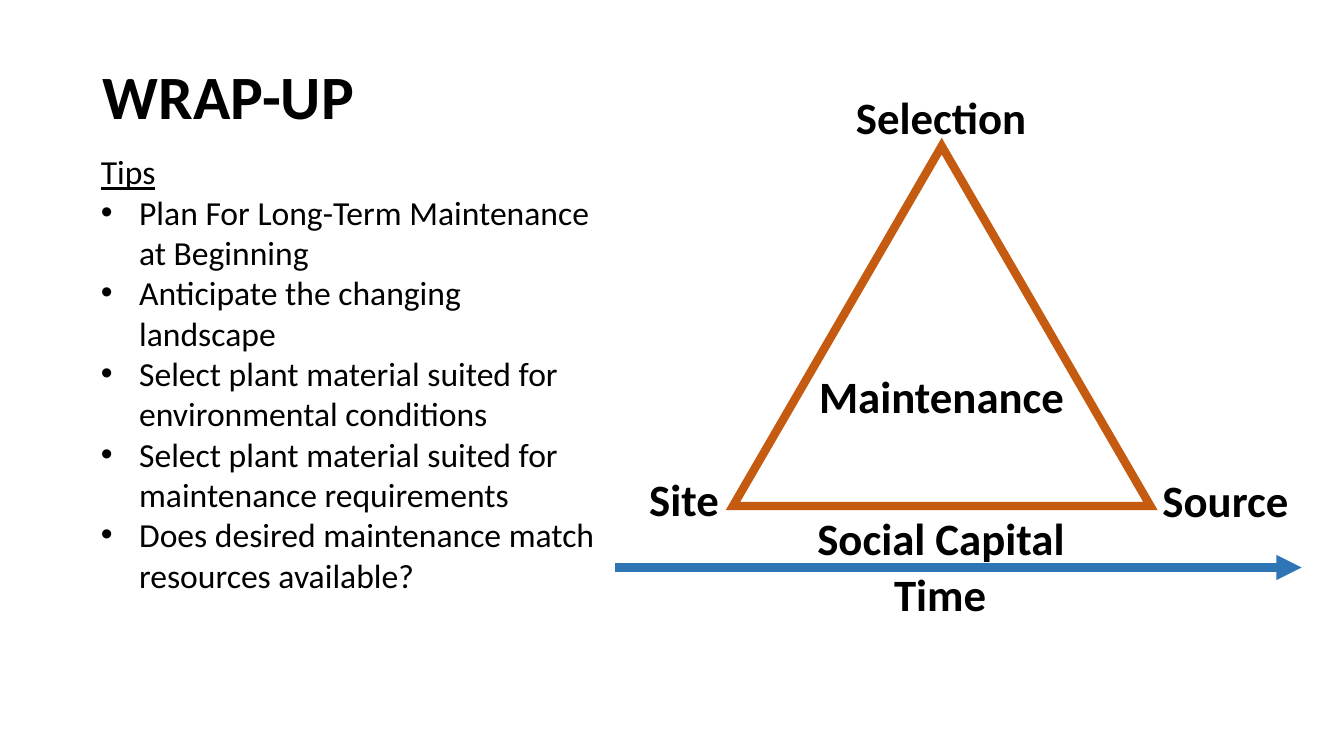
import dataclasses
import typing

import lxml.etree
import pptx
import pptx.dml.color
import pptx.enum.shapes
import pptx.enum.text
import pptx.oxml.ns
import pptx.util

SCALE = 9144
FONT = "Calibri"
BLACK = "000000"
RUST = "C55A11"
BLUE = "2E75B6"
ALIGN = pptx.enum.text.PP_ALIGN
ANCHOR = pptx.enum.text.MSO_ANCHOR


@dataclasses.dataclass
class Label:
    text: str
    left: int
    top: int
    width: int
    height: int = 64


LABELS = [
    Label("Site", 555, 463, 247),
    Label("Selection", 745, 84, 377),
    Label("Source", 1107, 464, 217),
    Label("Maintenance", 799, 360, 270),
    Label("Time", 832, 562, 201, 53),
    Label("Social Capital", 787, 501, 293),
]
TIPS = [
    "Plan For Long-Term Maintenance at Beginning",
    "Anticipate the changing landscape",
    "Select plant material suited for environmental conditions",
    "Select plant material suited for maintenance requirements",
    "Does desired maintenance match resources available?",
]


def px(size: int) -> int:
    return pptx.util.Emu(size * SCALE)


def paint(code: str) -> pptx.dml.color.RGBColor:
    return pptx.dml.color.RGBColor.from_string(code)


def add(node: typing.Any, tag: str, **attrs: str) -> None:
    item = lxml.etree.SubElement(node, pptx.oxml.ns.qn(tag))
    for key, value in attrs.items():
        item.set(key, value)


def place(shape: typing.Any, left: int, top: int, width: int, height: int) -> None:
    shape.left, shape.top = px(left), px(top)
    shape.width, shape.height = px(width), px(height)


def setup(shape: typing.Any, anchor: typing.Any) -> typing.Any:
    frame = shape.text_frame
    frame.word_wrap = True
    frame.auto_size = pptx.enum.text.MSO_AUTO_SIZE.NONE
    frame.vertical_anchor = anchor
    return frame


def write(para: typing.Any, text: str, size: int = 32, bold: bool = True,
          line: bool = False, align: typing.Any = ALIGN.CENTER,
          space: float = 1.0) -> None:
    para.alignment = align
    para.line_spacing = space
    para.space_before = pptx.util.Pt(0)
    run = para.add_run()
    run.text = text
    font = run.font
    font.name, font.size = FONT, pptx.util.Pt(size)
    font.bold, font.underline = bold, line
    font.color.rgb = paint(BLACK)


def mark(para: typing.Any, bullet: bool) -> None:
    props = para._p.get_or_add_pPr()
    props.set("marL", str(px(38 if bullet else 0)))
    props.set("indent", str(px(-38 if bullet else 0)))
    if bullet:
        add(props, "a:buFont", typeface="Arial")
        add(props, "a:buChar", char="•")
    else:
        add(props, "a:buNone")


def stroke(shape: typing.Any, code: str) -> typing.Any:
    shape.line.color.rgb = paint(code)
    shape.line.width = pptx.util.Pt(6)
    node = shape.line._get_or_add_ln()
    add(node, "a:miter", lim="800000")
    return node


def draw_text(slide: typing.Any) -> None:
    title = slide.shapes.title
    place(title, 92, 61, 1150, 124)
    frame = setup(title, ANCHOR.TOP)
    write(frame.paragraphs[0], "WRAP-UP", size=44, align=ALIGN.LEFT, space=0.9)

    body = slide.placeholders[1]
    place(body, 90, 145, 518, 629)
    frame = setup(body, ANCHOR.TOP)
    for rank, tip in enumerate(["Tips"] + TIPS):
        para = frame.add_paragraph() if rank else frame.paragraphs[0]
        write(para, tip, size=24, bold=False, line=rank == 0, align=ALIGN.LEFT)
        mark(para, rank > 0)


def draw_chart(slide: typing.Any) -> None:
    kind = pptx.enum.shapes.MSO_SHAPE.ISOSCELES_TRIANGLE
    peak = slide.shapes.add_shape(kind, px(727), px(145), px(414), px(357))
    peak.shadow.inherit = False
    peak.fill.background()
    stroke(peak, RUST)

    kind = pptx.enum.shapes.MSO_CONNECTOR.STRAIGHT
    time = slide.shapes.add_connector(kind, px(610), px(563), px(1291), px(563))
    add(stroke(time, BLUE), "a:tailEnd", type="triangle")
    add(time._element.spPr, "a:effectLst")

    for label in LABELS:
        box = slide.shapes.add_textbox(0, 0, 0, 0)
        place(box, label.left, label.top, label.width, label.height)
        write(setup(box, ANCHOR.MIDDLE).paragraphs[0], label.text)


def main() -> None:
    deck = pptx.Presentation()
    deck.slide_width, deck.slide_height = px(1333), px(750)
    slide = deck.slides.add_slide(deck.slide_layouts[1])
    draw_text(slide)
    draw_chart(slide)
    deck.save("out.pptx")


if __name__ == "__main__":
    main()
